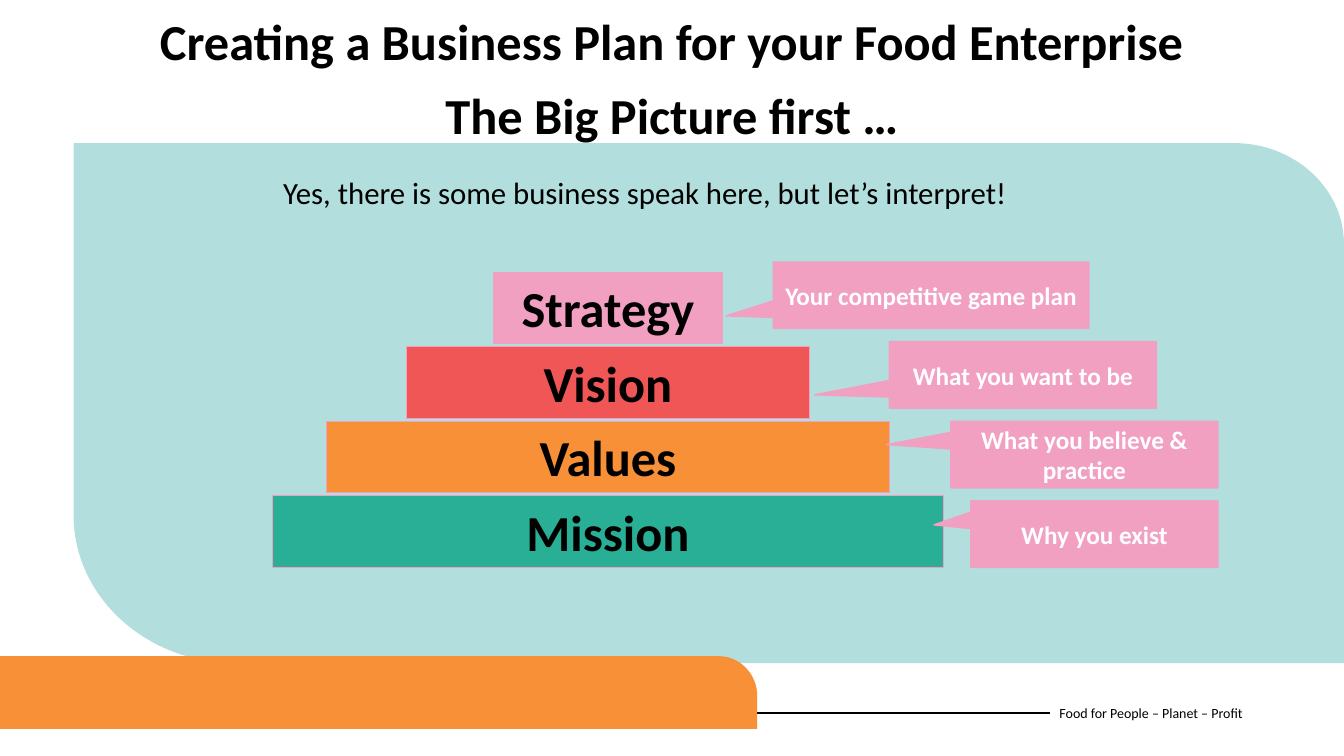
from pptx import Presentation
from pptx.dml.color import RGBColor
from pptx.enum.shapes import MSO_CONNECTOR, MSO_SHAPE
from pptx.enum.text import MSO_ANCHOR, PP_ALIGN
from pptx.oxml.ns import qn
from pptx.util import Inches, Pt
from lxml import etree

RECTANGLE = MSO_SHAPE.RECTANGLE
CALLOUT = MSO_SHAPE.RECTANGULAR_CALLOUT
STRAIGHT = MSO_CONNECTOR.STRAIGHT
LEFT, CENTER = PP_ALIGN.LEFT, PP_ALIGN.CENTER
TOP, MIDDLE = MSO_ANCHOR.TOP, MSO_ANCHOR.MIDDLE

BLACK, WHITE = "000000", "FFFFFF"
PINK, RED, ORANGE, GREEN, AQUA = "F1A0C2", "EF5655", "F79037", "28AF95", "B2DEDD"


def color(value):
    return RGBColor.from_string(value)


def curve(start, control_1, control_2, end, steps=32):
    """Points along a cubic curve, both ends included."""
    points = []
    for step in range(steps + 1):
        t = step / steps
        weights = ((1 - t) ** 3, 3 * t * (1 - t) ** 2, 3 * t * t * (1 - t), t ** 3)
        corners = (start, control_1, control_2, end)
        points.append(tuple(sum(w * c[axis] for w, c in zip(weights, corners))
                            for axis in (0, 1)))
    return points


class SlideBuilder:
    font = "Calibri"

    def __init__(self, page):
        self.page = page

    def set_text(self, shape, lines, size, ink=BLACK, bold=False, align=LEFT,
                 anchor=TOP, space_before=0):
        frame = shape.text_frame
        frame.word_wrap = True
        frame.vertical_anchor = anchor
        frame.text = "\n".join(lines)
        for para in frame.paragraphs:
            para.alignment = align
            para.space_before = Pt(space_before)
            para.font.name = self.font
            para.font.size = Pt(size)
            para.font.bold = bold
            para.font.color.rgb = color(ink)

    def text(self, left, top, width, height, lines, size, **style):
        box = self.page.shapes.add_textbox(
            Inches(left), Inches(top), Inches(width), Inches(height))
        self.set_text(box, lines, size, **style)

    def block(self, kind, left, top, width, height, fill, label, size, ink,
              line_width, anchor=TOP):
        shape = self.page.shapes.add_shape(
            kind, Inches(left), Inches(top), Inches(width), Inches(height))
        shape.shadow.inherit = False
        shape.fill.solid()
        shape.fill.fore_color.rgb = color(fill)
        shape.line.color.rgb = color(PINK)
        shape.line.width = Pt(line_width)
        self.set_text(shape, [label], size, ink=ink, bold=True, align=CENTER,
                      anchor=anchor)
        return shape

    def panel(self, points, fill):
        outline = [(Inches(x), Inches(y)) for x, y in points]
        builder = self.page.shapes.build_freeform(*outline[0], scale=1.0)
        builder.add_line_segments(outline[1:], close=True)
        shape = builder.convert_to_shape()
        shape.shadow.inherit = False
        shape.fill.solid()
        shape.fill.fore_color.rgb = color(fill)
        shape.line.fill.background()

    def line(self, left, right, y, width):
        rule = self.page.shapes.add_connector(
            STRAIGHT, Inches(left), Inches(y), Inches(right), Inches(y))
        rule.line.color.rgb = color(BLACK)
        rule.line.width = Pt(width)
        etree.SubElement(rule._element.spPr, qn("a:effectLst"))


def main():
    deck = Presentation()
    deck.slide_width, deck.slide_height = Inches(13.33), Inches(7.5)
    slide = SlideBuilder(deck.slides.add_slide(deck.slide_layouts[6]))

    # Footer and background panels
    slide.text(10.41, 6.87, 2.73, 0.4, ["Food for People – Planet – Profit"], 10,
               anchor=MIDDLE)
    slide.line(0, 10.41, 7.07, 1.5)
    slide.panel([(0.73, 1.42)]
                + curve((12.24, 1.42), (12.84, 1.42), (13.33, 1.87), (13.33, 2.42))
                + [(13.33, 6.58)]
                + curve((2.34, 6.58), (1.45, 6.58), (0.73, 5.92), (0.73, 5.11)), AQUA)
    slide.panel([(0, 7.23), (0, 6.51)]
                + curve((7.13, 6.51), (7.34, 6.51), (7.51, 6.69), (7.51, 6.9))
                + [(7.51, 7.23)], ORANGE)

    # Title and introduction
    slide.text(0.87, 0.05, 11.59, 0.88,
               ["Creating a Business Plan for your Food Enterprise",
                "The Big Picture first …"],
               36, bold=True, align=CENTER, space_before=10)
    slide.text(2.71, 1.67, 10.39, 0.47,
               ["Yes, there is some business speak here, but let’s interpret!"], 22)

    # Pyramid, one centred step per level
    pyramid_center, first_step, step_pitch = 6.03, 2.7, 0.74
    steps = [("Strategy", 2.27, PINK), ("Vision", 4, RED),
             ("Values", 5.59, ORANGE), ("Mission", 6.65, GREEN)]
    for level, (label, width, fill) in enumerate(steps):
        slide.block(RECTANGLE, pyramid_center - width / 2,
                    first_step + level * step_pitch, width, 0.71,
                    fill, label, 36, BLACK, 0.75)

    # Callouts, each with its pointer tip relative to the box centre
    callouts = [("Your competitive game plan", 7.67, 3.13, (-0.65, 0.31)),
                ("What you want to be", 8.82, 2.65, (-0.78, 0.3)),
                ("What you believe & practice", 9.43, 2.65, (-0.74, -0.15)),
                ("Why you exist", 9.63, 2.45, (-0.65, -0.14))]
    first_callout, callout_pitch = 2.6, 0.79
    for level, (label, left, width, tip) in enumerate(callouts):
        callout = slide.block(CALLOUT, left, first_callout + level * callout_pitch,
                              width, 0.66, PINK, label, 18, WHITE, 1, MIDDLE)
        callout.adjustments[0], callout.adjustments[1] = tip

    deck.save("out.pptx")


if __name__ == "__main__":
    main()
